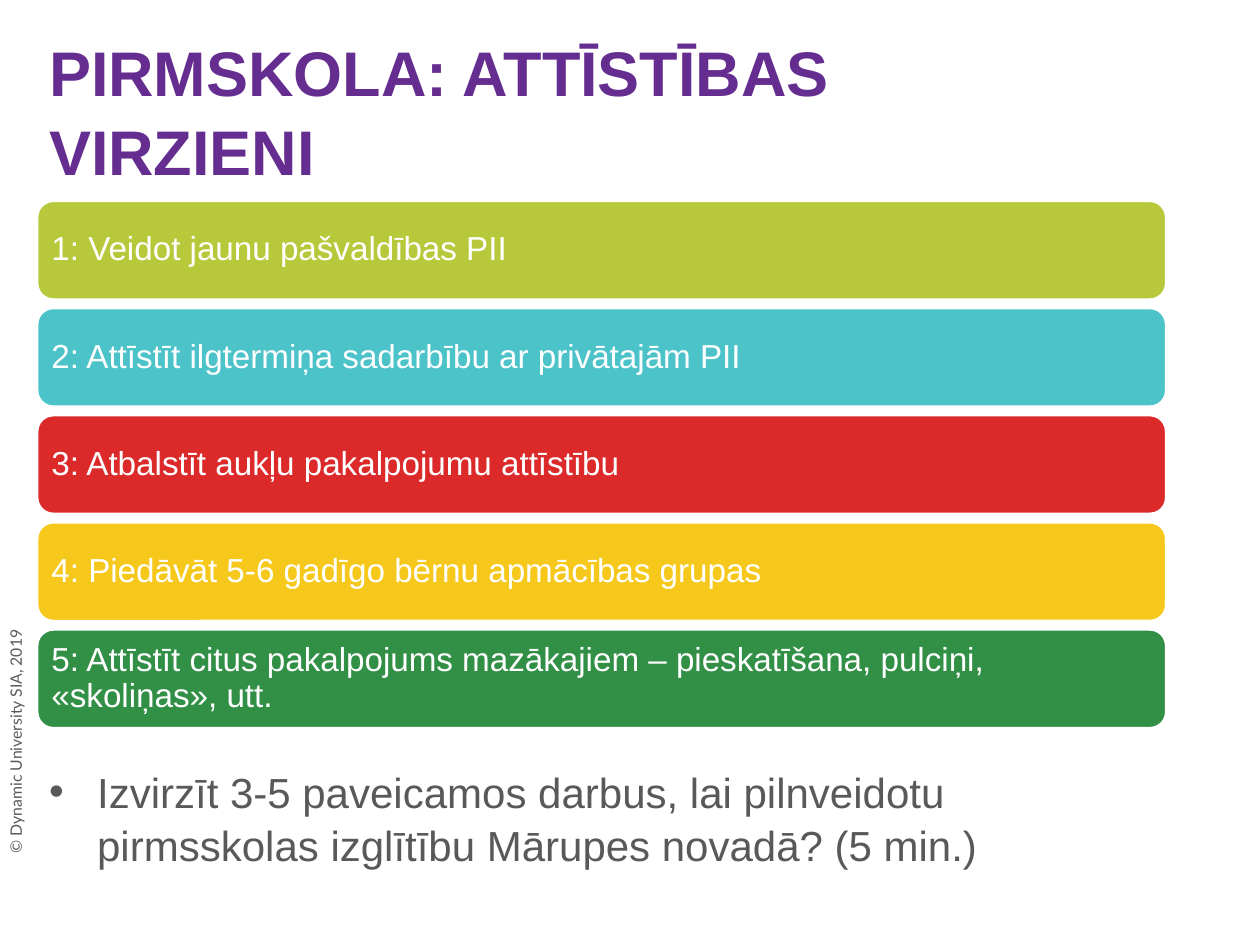
"""Build the slide on directions for preschool development."""
from dataclasses import dataclass

from lxml import etree
from pptx import Presentation
from pptx.dml.color import RGBColor
from pptx.enum.shapes import MSO_SHAPE
from pptx.enum.text import MSO_ANCHOR, MSO_AUTO_SIZE, PP_ALIGN
from pptx.oxml.ns import qn
from pptx.util import Cm, Pt

ROUNDED = MSO_SHAPE.ROUNDED_RECTANGLE
TOP, MIDDLE = MSO_ANCHOR.TOP, MSO_ANCHOR.MIDDLE
FIT_SHAPE = MSO_AUTO_SIZE.SHAPE_TO_FIT_TEXT
LEFT = PP_ALIGN.LEFT


@dataclass(frozen=True)
class Theme:
    font: str = "Arial"
    footer_font: str = "Lato"
    purple: str = "662D91"
    grey: str = "58595B"
    white: str = "FFFFFF"
    bars: tuple = ("B7C93B", "4BC3C9", "DC2A2B", "F6C81C", "318F46")
    title_size: int = 36
    body_size: int = 24
    bar_size: int = 19
    footer_size: int = 9


THEME = Theme()

DIRECTIONS = (
    "1: Veidot jaunu pašvaldības PII",
    "2: Attīstīt ilgtermiņa sadarbību ar privātajām PII",
    "3: Atbalstīt aukļu pakalpojumu attīstību",
    "4: Piedāvāt 5-6 gadīgo bērnu apmācības grupas",
    "5: Attīstīt citus pakalpojums mazākajiem – pieskatīšana, pulciņi, «skoliņas», utt.",
)
MARGIN, WIDTH = 0.74, 22.78
BAR_TOP, BAR_HEIGHT, BAR_PITCH = 4.04, 2.01, 2.16


def set_text(sp, text, size, color, font=THEME.font, bold=False, anchor=TOP, spacing=1.0):
    tf = sp.text_frame
    tf.word_wrap = True
    tf.vertical_anchor = anchor
    tf.text = text
    p = tf.paragraphs[0]
    p.alignment = LEFT
    p.line_spacing = spacing
    r = p.runs[0]
    r.font.name = font
    r.font.size = Pt(size)
    r.font.bold = bold
    r.font.color.rgb = RGBColor.from_string(color)
    return p


def add_text(slide, box, *args, **kwargs):
    sp = slide.shapes.add_textbox(*map(Cm, box))
    return sp, set_text(sp, *args, **kwargs)


def add_bullet(p, indent):
    pPr = p._p.get_or_add_pPr()
    pPr.set("marL", str(Cm(indent)))
    pPr.set("indent", str(-Cm(indent)))
    etree.SubElement(pPr, qn("a:buFont")).set("typeface", THEME.font)
    etree.SubElement(pPr, qn("a:buChar")).set("char", "•")


def add_bar(slide, top, text, color):
    sp = slide.shapes.add_shape(ROUNDED, Cm(MARGIN), Cm(top), Cm(WIDTH), Cm(BAR_HEIGHT))
    sp.shadow.inherit = False
    sp.fill.solid()
    sp.fill.fore_color.rgb = RGBColor.from_string(color)
    sp.line.color.rgb = RGBColor.from_string(THEME.white)
    sp.line.width = Pt(2)
    tf = sp.text_frame
    tf.margin_left = tf.margin_right = tf.margin_top = tf.margin_bottom = Cm(0.2)
    set_text(sp, text, THEME.bar_size, THEME.white, anchor=MIDDLE, spacing=0.9)


def main():
    prs = Presentation()
    prs.slide_width, prs.slide_height = Cm(25.4), Cm(19.05)
    slide = prs.slides.add_slide(prs.slide_layouts[6])

    sp, p = add_text(slide, (-4.95, 11.86, 10.54, 0.64), "© Dynamic University SIA, 2019",
                     THEME.footer_size, THEME.grey, font=THEME.footer_font)
    sp.rotation = 270
    sp.text_frame.auto_size = FIT_SHAPE

    add_text(slide, (MARGIN, 0.61, 16.92, 3.18), "PIRMSKOLA: ATTĪSTĪBAS VIRZIENI",
             THEME.title_size, THEME.purple, bold=True, anchor=MIDDLE, spacing=1.05)

    for i, (text, color) in enumerate(zip(DIRECTIONS, THEME.bars)):
        add_bar(slide, BAR_TOP + i * BAR_PITCH, text, color)

    sp, p = add_text(slide, (MARGIN, 15.27, WIDTH, 2.16),
                     "Izvirzīt 3-5 paveicamos darbus, lai pilnveidotu "
                     "pirmsskolas izglītību Mārupes novadā? (5 min.)",
                     THEME.body_size, THEME.grey, spacing=1.05)
    add_bullet(p, 0.97)

    prs.save("out.pptx")


if __name__ == "__main__":
    main()
